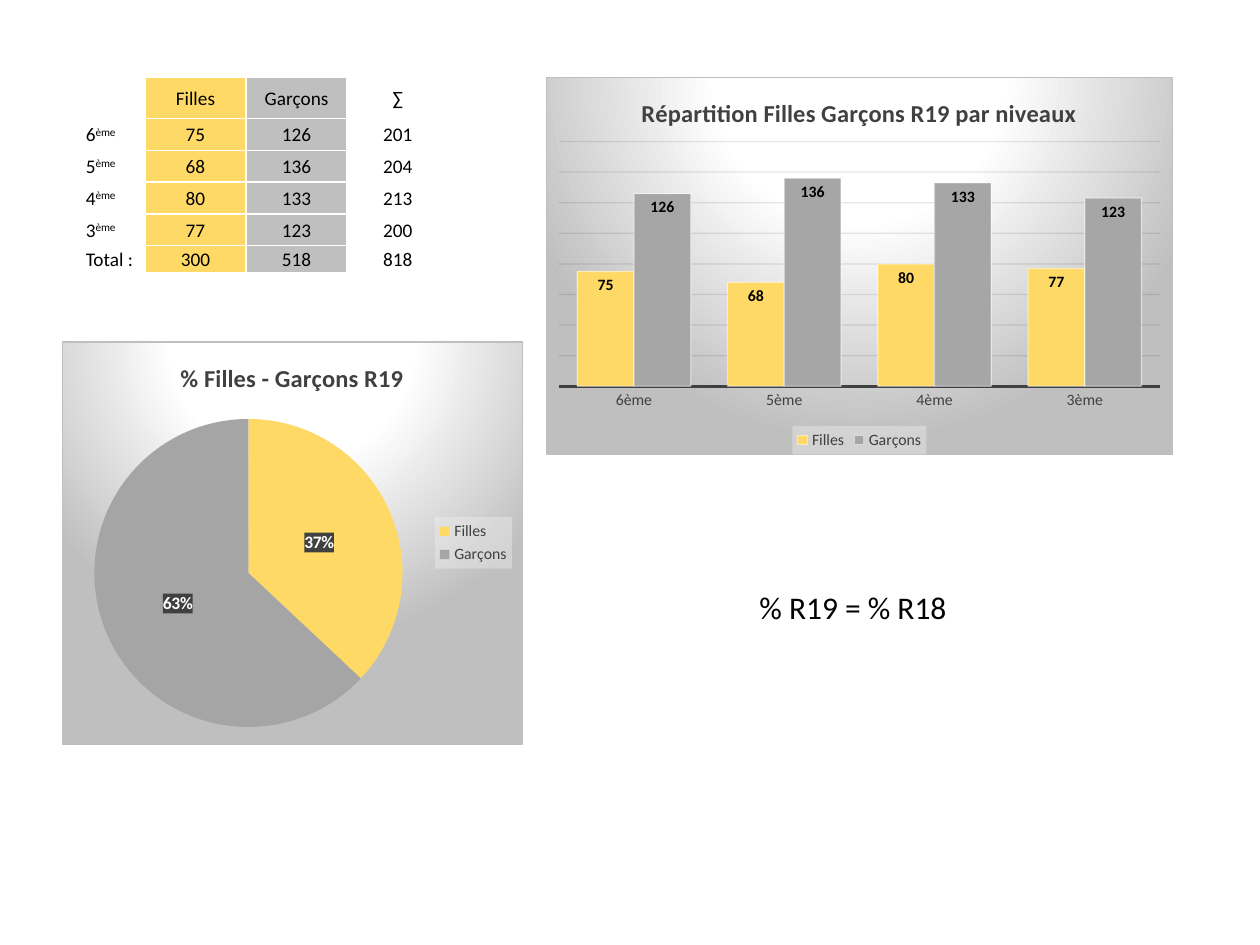
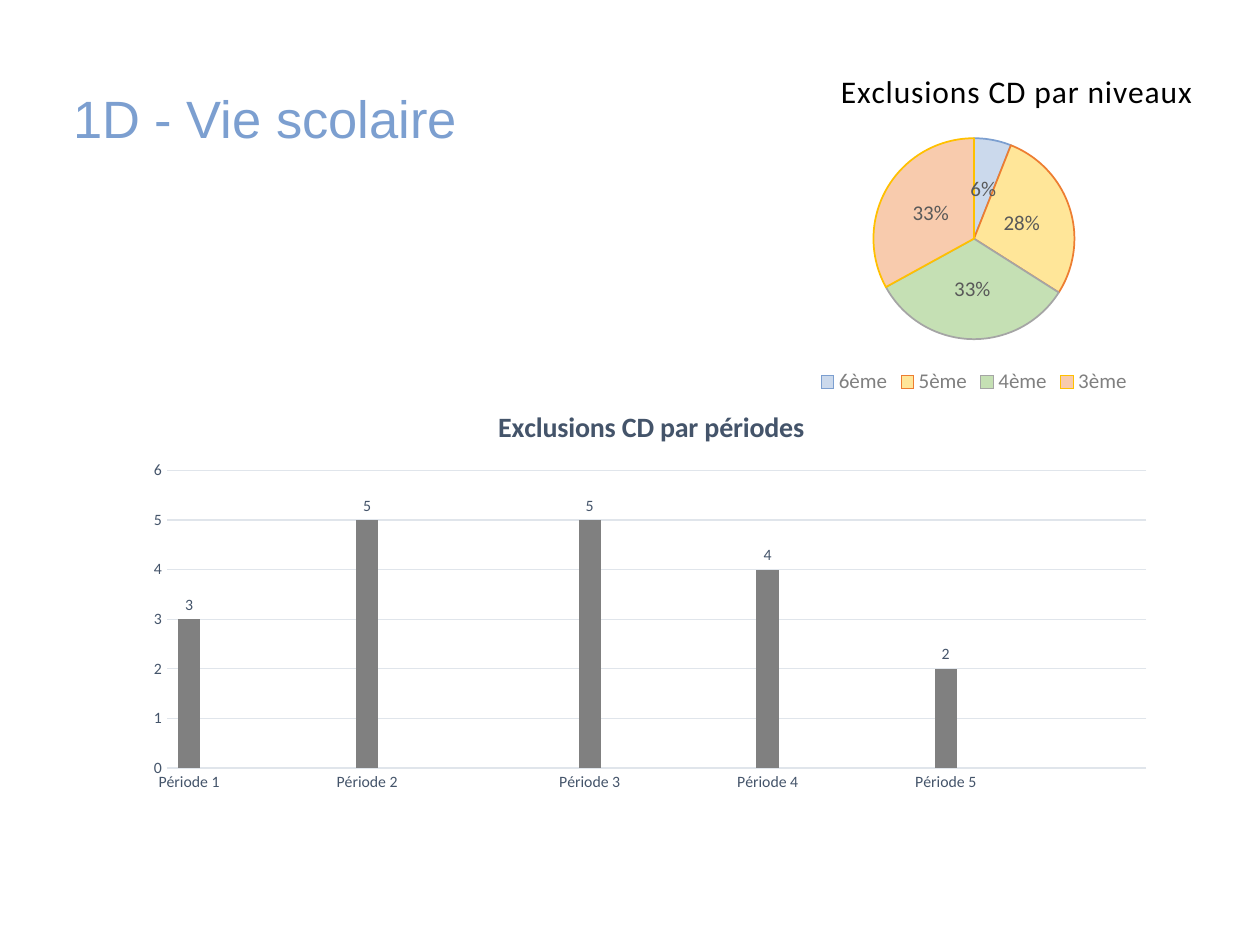
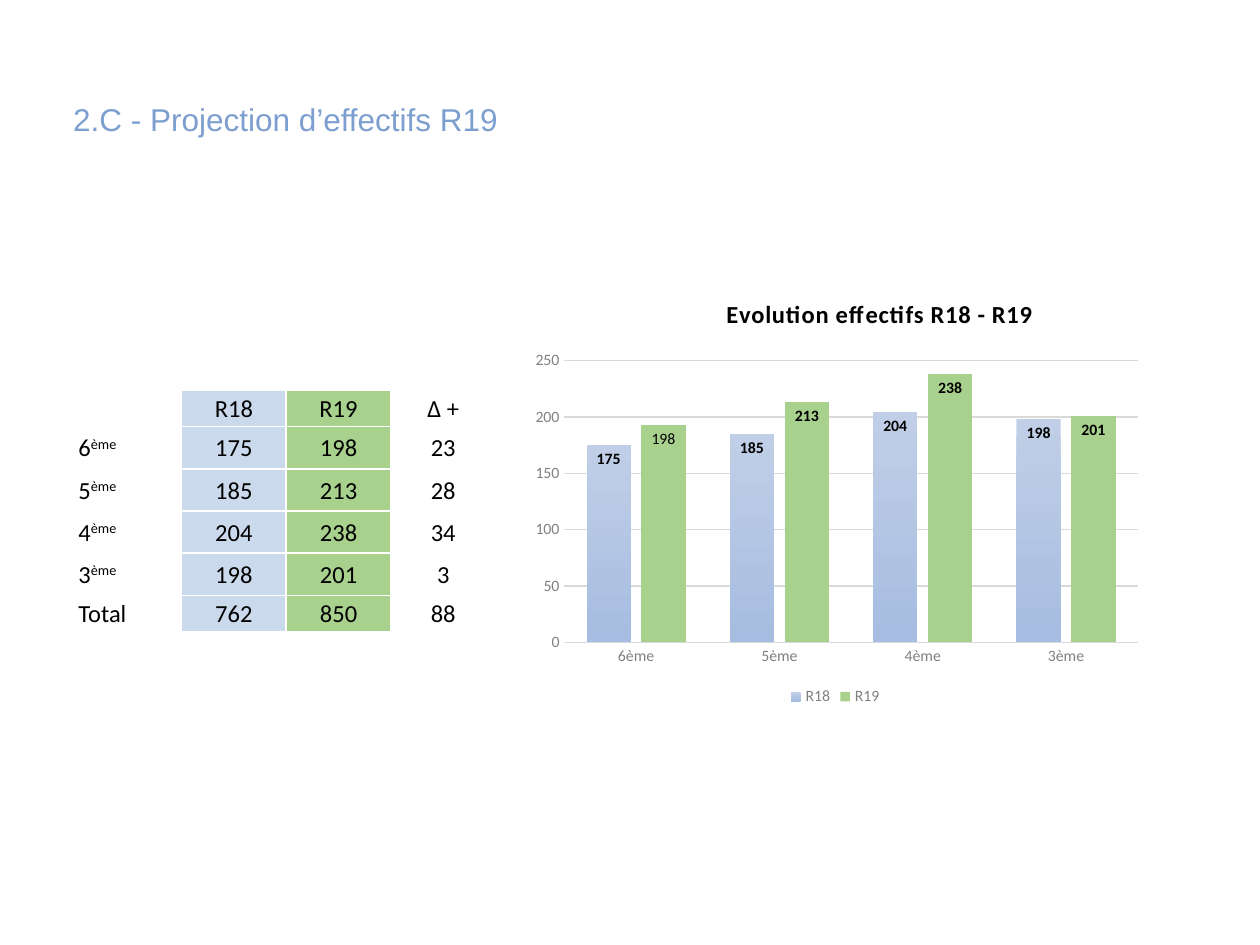
from pptx import Presentation
from pptx.chart.data import CategoryChartData
from pptx.dml.color import RGBColor
from pptx.enum.chart import XL_CHART_TYPE, XL_LABEL_POSITION, XL_LEGEND_POSITION, XL_TICK_MARK
from pptx.enum.text import MSO_ANCHOR, PP_ALIGN
from pptx.oxml import parse_xml
from pptx.oxml.ns import nsdecls
from pptx.util import Cm, Pt

COLUMN, PIE = XL_CHART_TYPE.COLUMN_CLUSTERED, XL_CHART_TYPE.PIE
CENTER, IN_END, OUT_END = (
    XL_LABEL_POSITION.CENTER, XL_LABEL_POSITION.INSIDE_END, XL_LABEL_POSITION.OUTSIDE_END)
BOTTOM, RIGHT = XL_LEGEND_POSITION.BOTTOM, XL_LEGEND_POSITION.RIGHT
NO_TICK = XL_TICK_MARK.NONE
MIDDLE = MSO_ANCHOR.MIDDLE
LEFT, MID = PP_ALIGN.LEFT, PP_ALIGN.CENTER

HEX = {
    "white": "FFFFFF", "black": "000000", "title": "7C9FD0", "dark": "404040",
    "gold": "FFD966", "silver": "BFBFBF", "steel": "A6A6A6", "stone": "A5A5A5",
    "gray": "808080", "text": "595959", "pale": "D9D9D9", "ink": "0D0D0D",
    "slate": "44546A", "mist": "E0E5EB", "sky": "CBD9EC", "cream": "FFE699",
    "mint": "C5E0B4", "peach": "F8CBAD", "green": "A9D18E", "orange": "ED7D31",
    "amber": "FFC000", "top": "C0CFE7", "base": "A6BCE0", "box": "F2F2F2",
}
LEVELS = ["6ème", "5ème", "4ème", "3ème"]
BODY, HEAD = "Calibri", "Arial"


def rgb(name):
    return RGBColor.from_string(HEX[name])


def solid(name, alpha=100):
    return (f'<a:solidFill><a:srgbClr val="{HEX[name]}">'
            f'<a:alpha val="{alpha * 1000}"/></a:srgbClr></a:solidFill>')


def props(fill="<a:noFill/>", line="<a:noFill/>"):
    return parse_xml(f'<c:spPr {nsdecls("c", "a")}>{fill}<a:ln w="9525">{line}</a:ln></c:spPr>')


def glow():
    stops = "".join(f'<a:gs pos="{pos}000"><a:srgbClr val="{HEX[name]}"/></a:gs>'
                    for pos, name in ((0, "white"), (39, "white"), (100, "silver")))
    return (f'<a:gradFill><a:gsLst>{stops}</a:gsLst><a:path path="circle">'
            '<a:fillToRect l="50000" t="-80000" r="50000" b="180000"/></a:path></a:gradFill>')


def layout(inner=False, **sides):
    target = '<c:layoutTarget val="inner"/>' if inner else ""
    modes = "".join(f'<c:{key}Mode val="edge"/>' for key in "xy")
    spots = "".join(f'<c:{key} val="{val}"/>' for key, val in sides.items())
    return parse_xml(f'<c:layout {nsdecls("c")}><c:manualLayout>{target}{modes}{spots}'
                     '</c:manualLayout></c:layout>')


def fade(chart, query, alpha):
    for node in chart.element.xpath(query):
        node.append(parse_xml(f'<a:alpha {nsdecls("a")} val="{alpha * 1000}"/>'))


class Deck:
    def __init__(self):
        self.prs = Presentation()
        self.prs.slide_width, self.prs.slide_height = Cm(25.4), Cm(19.05)
        self.slide = None

    def font(self, font, size, color="black", bold=False, name=BODY):
        font.size, font.bold, font.name = Pt(size), bold, name
        font.color.rgb = rgb(color)

    def page(self, title=None, size=18):
        self.slide = self.prs.slides.add_slide(self.prs.slide_layouts[5 if title else 6])
        if title:
            shape = self.slide.shapes.title
            shape.left, shape.top, shape.width, shape.height = (
                Cm(1.22), Cm(1.22), Cm(22.94), Cm(2.44))
            shape.text_frame.text = title
            shape.text_frame.vertical_anchor = MIDDLE
            para = shape.text_frame.paragraphs[0]
            para.alignment, para.line_spacing = LEFT, 0.9
            self.font(para.font, size, "title", name=HEAD)

    def note(self, text, x, y, w, h, size):
        frame = self.slide.shapes.add_textbox(Cm(x), Cm(y), Cm(w), Cm(h)).text_frame
        frame.word_wrap = True
        frame.text = text
        self.font(frame.paragraphs[0].font, size)

    def table(self, rows, x, y, widths, heights, fills, size):
        shape = self.slide.shapes.add_table(
            len(rows), len(widths), Cm(x), Cm(y), Cm(sum(widths)), Cm(sum(heights)))
        grid = shape.table
        grid.first_row = grid.horz_banding = False
        for col, width in zip(grid.columns, widths):
            col.width = Cm(width)
        for row, height, texts in zip(grid.rows, heights, rows):
            row.height = Cm(height)
            for num, (cell, text, fill) in enumerate(zip(row.cells, texts, fills)):
                self.cell(cell, str(text), fill, size, MID if num else LEFT)

    def cell(self, cell, text, fill, size, align):
        cell.fill.solid()
        cell.fill.fore_color.rgb = rgb(fill)
        cell.vertical_anchor = MIDDLE
        cell.margin_left = cell.margin_right = cell.margin_top = Cm(0.03)
        cell.margin_bottom = 0
        for pos, side in enumerate("LRTB"):
            cell.fill._xPr.insert(pos, parse_xml(
                f'<a:ln{side} {nsdecls("a")} w="12700">{solid("white")}</a:ln{side}>'))
        para = cell.text_frame.paragraphs[0]
        para.alignment = align
        self.font(para.font, size)
        if text in LEVELS:
            para.add_run().text = text[0]
            run = para.add_run()
            run.text = text[1:]
            run.font._element.set("baseline", "30000")
        elif text:
            para.add_run().text = text

    def chart(self, kind, box, cats, series, title, plot, back=None):
        data = CategoryChartData()
        data.categories = cats
        for name, vals in series:
            data.add_series(name, vals)
        chart = self.slide.shapes.add_chart(kind, *map(Cm, box), data).chart
        self.font(chart.font, 10)
        chart.has_legend = False
        self.head(chart, **title)
        area = chart.element.xpath("c:chart/c:plotArea")[0]
        for node in area.xpath("c:layout"):
            area.remove(node)
        area.insert(0, layout(True, **dict(zip("xywh", plot))))
        area.append(props())
        frame = props(glow(), solid("silver")) if back else props()
        chart.element.xpath("c:chart")[0].addnext(frame)
        return chart

    def head(self, chart, text, size, color, bold=True, space=0, spot=None):
        frame = chart.chart_title.text_frame
        frame.text = text
        self.font(frame.paragraphs[0].font, size, color, bold)
        node = chart.chart_title.element
        node.xpath(".//a:defRPr")[0].set("spc", str(space))
        if spot:
            for old in node.xpath("c:layout"):
                node.remove(old)
            node.xpath("c:overlay")[0].addprevious(layout(x=spot[0], y=spot[1]))

    def legend(self, chart, place, size, color, box=False):
        chart.has_legend = True
        chart.legend.position = place
        chart.legend.include_in_layout = False
        self.font(chart.legend.font, size, color)
        if box:
            chart.element.xpath("c:chart/c:legend/c:txPr")[0].addprevious(
                props(solid("box", 39)))

    def labels(self, labels, place, size, color, bold=False, share=False):
        labels.show_percentage, labels.show_value = share, not share
        labels.position = place
        self.font(labels.font, size, color, bold)

    def pie(self, chart, fills, lines, size, color, bold=False):
        plot = chart.plots[0]
        plot.vary_by_categories = True
        for num, fill in enumerate(fills):
            form = plot.series[0].points[num].format
            form.fill.solid()
            form.fill.fore_color.rgb = rgb(fill)
            if lines:
                form.line.color.rgb = rgb(lines[num])
                form.line.width = Pt(1)
            else:
                form.line.fill.background()
        self.labels(plot.series[0].data_labels, CENTER, size, color, bold, True)

    def bars(self, chart, fills, gap, overlap, place, color, bold):
        plot = chart.plots[0]
        plot.vary_by_categories = False
        plot.gap_width, plot.overlap = gap, overlap
        for series, fill in zip(plot.series, fills):
            paint = series.format.fill
            if isinstance(fill, tuple):
                paint.gradient()
                paint.gradient_angle = 270
                for stop, name in zip(paint.gradient_stops, fill):
                    stop.color.rgb = rgb(name)
            else:
                paint.solid()
                paint.fore_color.rgb = rgb(fill)
            self.labels(series.data_labels, place, 9, color, bold)

    def axes(self, chart, top, step, color, line, width, grid):
        cat, val = chart.category_axis, chart.value_axis
        for axis in (cat, val):
            axis.major_tick_mark = axis.minor_tick_mark = NO_TICK
            self.font(axis.tick_labels.font, 9, color)
        cat.format.line.color.rgb = rgb(line)
        cat.format.line.width = Pt(width)
        val.minimum_scale, val.maximum_scale, val.major_unit = 0, top, step
        val.format.line.fill.background()
        val.has_major_gridlines = True
        val.major_gridlines.format.line.color.rgb = rgb(grid)
        val.major_gridlines.format.line.width = Pt(0.75)
        for node in chart.element.xpath(".//c:catAx/c:txPr/a:bodyPr"):
            node.set("rot", "-60000000")


def split(deck):
    girls, boys = [75, 68, 80, 77], [126, 136, 133, 123]
    deck.page()
    rows = [["", "Filles", "Garçons", "∑"]]
    rows += [[lev, g, b, g + b] for lev, g, b in zip(LEVELS, girls, boys)]
    rows.append(["Total :", sum(girls), sum(boys), sum(girls + boys)])
    deck.table(rows, 1.7, 1.55, [1.22] + [2.04] * 3, [0.84] + [0.64] * 4 + [0.55],
               ["white", "gold", "silver", "white"], 11)

    chart = deck.chart(
        COLUMN, (11, 1.55, 12.65, 7.62), LEVELS, [("Filles", girls), ("Garçons", boys)],
        {"text": "Répartition Filles Garçons R19 par niveaux", "size": 14, "color": "dark"},
        (0.02, 0.17, 0.96, 0.65), True)
    deck.bars(chart, ["gold", "steel"], 65, 0, IN_END, "black", True)
    for series in chart.plots[0].series:
        series.format.line.color.rgb = rgb("white")
        series.format.line.width = Pt(0.75)
    fade(chart, ".//c:ser/c:spPr/a:ln//a:srgbClr", 50)
    deck.axes(chart, 160, 20, "dark", "dark", 1.5, "ink")
    fade(chart, ".//c:majorGridlines//a:srgbClr", 10)
    chart.value_axis.visible = False
    deck.legend(chart, BOTTOM, 9, "dark", True)

    chart = deck.chart(
        PIE, (1.24, 6.88, 9.3, 8.13), ["Filles", "Garçons"], [("Series 1", [37, 63])],
        {"text": "% Filles - Garçons R19", "size": 14, "color": "dark"},
        (0.07, 0.19, 0.67, 0.77), True)
    deck.pie(chart, ["gold", "stone"], None, 10, "white", True)
    chart.element.xpath(".//c:ser/c:dLbls/c:txPr")[0].addprevious(props(solid("dark", 90)))
    deck.legend(chart, RIGHT, 9, "dark", True)
    deck.note("% R19 = % R18", 15.06, 11.73, 4.5, 1.02, 18)


def school(deck):
    deck.page("1D - Vie scolaire", 30)
    chart = deck.chart(
        PIE, (14.25, 0.94, 10.77, 7.11), LEVELS, [("Series 1", [6, 28, 33, 33])],
        {"text": "Exclusions CD par niveaux", "size": 18, "color": "black",
         "bold": False, "space": 50, "spot": (0.24, 0.05)},
        (0.31, 0.26, 0.38, 0.57))
    deck.pie(chart, ["sky", "cream", "mint", "peach"],
             ["title", "orange", "stone", "amber"], 12, "text")
    deck.legend(chart, BOTTOM, 12, "gray")

    cats, vals = [""] * 22, [None] * 22
    spots = zip((0, 4, 9, 13, 17), (3, 5, 5, 4, 2))
    for num, (spot, count) in enumerate(spots, 1):
        cats[spot], vals[spot] = f"Période {num}", count
    chart = deck.chart(
        COLUMN, (2.74, 7.82, 20.78, 8.33), cats, [("Series 1", vals)],
        {"text": "Exclusions CD par périodes", "size": 16, "color": "slate"},
        (0.03, 0.2, 0.95, 0.72))
    deck.bars(chart, ["gray"], 100, -24, OUT_END, "slate", False)
    deck.axes(chart, 6, 1, "slate", "mist", 0.75, "mist")


def growth(deck):
    old, new = [175, 185, 204, 198], [198, 213, 238, 201]
    deck.page("2.C - Projection d’effectifs R19")
    rows = [["", "R18", "R19", "∆ +"]]
    rows += [[lev, a, b, b - a] for lev, a, b in zip(LEVELS, old, new)]
    rows.append(["Total", sum(old), sum(new), sum(new) - sum(old)])
    deck.table(rows, 1.55, 7.87, [2.11] * 4, [0.73] + [0.85] * 4 + [0.73],
               ["white", "sky", "green", "white"], 14)

    chart = deck.chart(
        COLUMN, (10.49, 5.72, 12.7, 8.61), LEVELS,
        [("R18", old), ("R19", [193] + new[1:])],
        {"text": "Evolution effectifs R18 - R19", "size": 14, "color": "black",
         "space": 30, "spot": (0.32, 0.02)},
        (0.07, 0.18, 0.91, 0.66))
    deck.bars(chart, [("top", "base"), "green"], 100, -24, IN_END, "black", True)
    label = chart.plots[0].series[1].points[0].data_label
    label.text_frame.text = str(new[0])
    deck.font(label.text_frame.paragraphs[0].font, 9)
    label.position = IN_END
    deck.axes(chart, 250, 50, "gray", "pale", 0.75, "pale")
    deck.legend(chart, BOTTOM, 9, "gray")


def main():
    deck = Deck()
    split(deck)
    school(deck)
    growth(deck)
    deck.prs.save("out.pptx")


if __name__ == "__main__":
    main()
